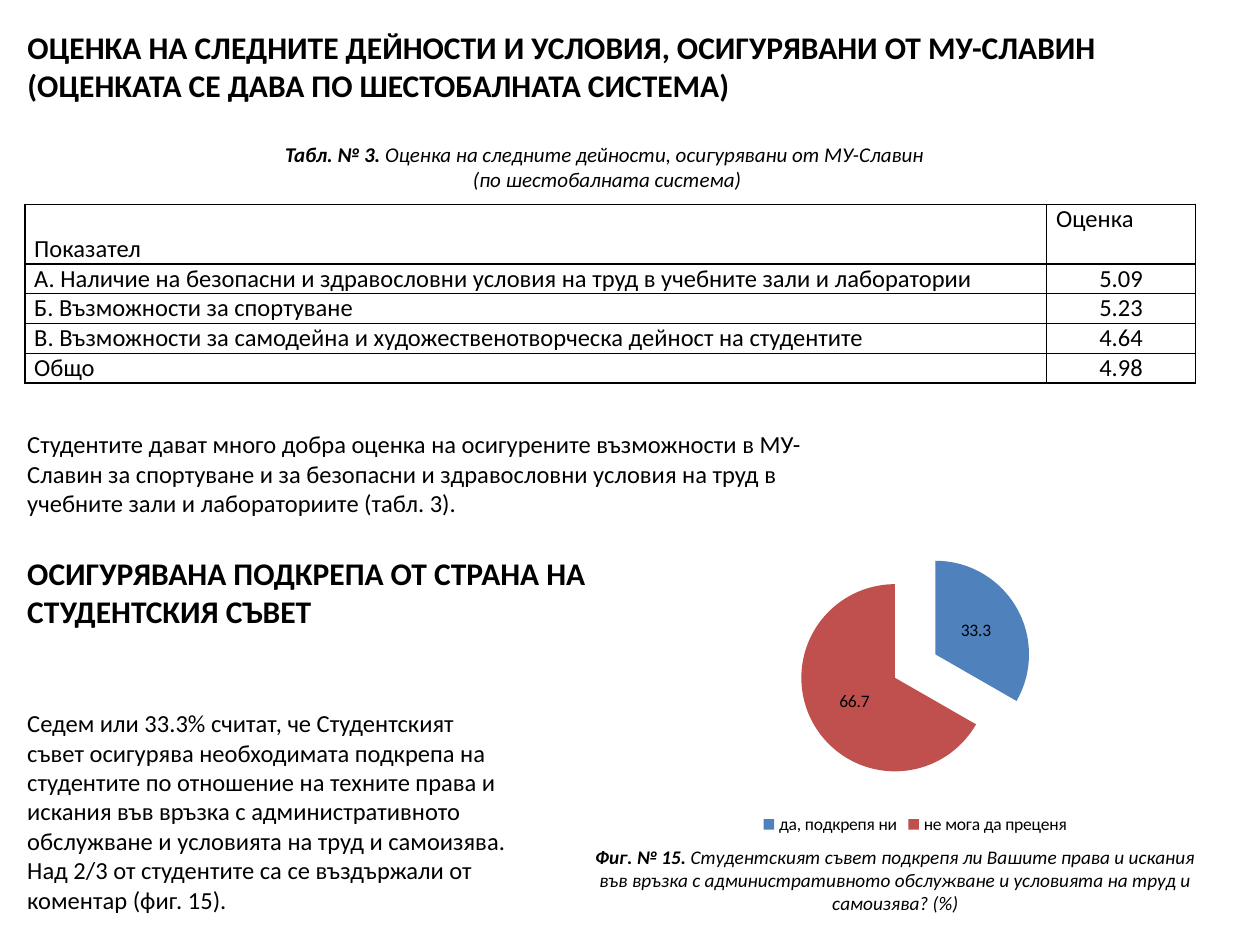
from lxml import etree
from pptx import Presentation
from pptx.chart.data import CategoryChartData
from pptx.dml.color import RGBColor
from pptx.enum.chart import XL_CHART_TYPE, XL_LABEL_POSITION, XL_LEGEND_POSITION
from pptx.enum.text import MSO_ANCHOR, MSO_AUTO_SIZE, PP_ALIGN
from pptx.oxml.ns import qn
from pptx.util import Cm, Pt

PIE = XL_CHART_TYPE.PIE_EXPLODED
LABEL_CENTER = XL_LABEL_POSITION.CENTER
LEGEND_BOTTOM = XL_LEGEND_POSITION.BOTTOM
TOP, MIDDLE, BOTTOM = MSO_ANCHOR.TOP, MSO_ANCHOR.MIDDLE, MSO_ANCHOR.BOTTOM
LEFT, CENTER, JUSTIFY = PP_ALIGN.LEFT, PP_ALIGN.CENTER, PP_ALIGN.JUSTIFY

FONT = "Calibri"
COLORS = {"text": "000000", "border": "000000", "yes": "4F81BD", "unsure": "C0504D"}

TITLE = ("ОЦЕНКА НА СЛЕДНИТЕ ДЕЙНОСТИ И УСЛОВИЯ, ОСИГУРЯВАНИ ОТ МУ-СЛАВИН "
         "(ОЦЕНКАТА СЕ ДАВА ПО ШЕСТОБАЛНАТА СИСТЕМА)")
TABLE_CAPTION = [
    [("Табл. № 3.", True),
     (" Оценка на следните дейности, осигурявани от МУ-Славин ", False)],
    [("(по шестобалната система)", False)],
]
RATINGS = [
    ("Показател", "Оценка"),
    ("А. Наличие на безопасни и здравословни условия на труд в учебните зали и лаборатории", "5.09"),
    ("Б. Възможности за спортуване", "5.23"),
    ("В. Възможности за самодейна и художественотворческа дейност на студентите", "4.64"),
    ("Общо", "4.98"),
]
RATINGS_COMMENT = (
    "Студентите дават много добра оценка на осигурените възможности в МУ-Славин "
    "за спортуване и за безопасни и здравословни условия на труд в учебните зали "
    "и лабораториите (табл. 3).")
SUPPORT_HEADING = "ОСИГУРЯВАНА ПОДКРЕПА ОТ СТРАНА НА СТУДЕНТСКИЯ СЪВЕТ"
SUPPORT_COMMENT = (
    "Седем или 33.3% считат, че Студентският съвет осигурява необходимата подкрепа "
    "на студентите по отношение на техните права и искания във връзка с "
    "административното обслужване и условията на труд и самоизява. Над 2/3 от "
    "студентите са се въздържали от коментар (фиг. 15).")
SUPPORT_ANSWERS = [("да, подкрепя ни", 33.3, "yes"), ("не мога да преценя", 66.7, "unsure")]
CHART_CAPTION = [[
    ("Фиг. № 15. ", True),
    ("Студентският съвет подкрепя ли Вашите права и искания във връзка с "
     "административното обслужване и условията на труд и самоизява? (%)", False),
]]


def color(name):
    """Return the palette colour with the given name."""
    return RGBColor.from_string(COLORS[name])


def style_font(font, size, bold=False, italic=False):
    """Give a font the slide's typeface and colour."""
    font.name, font.size = FONT, Pt(size)
    font.bold, font.italic = bold, italic
    font.color.rgb = color("text")


def write_text(frame, content, size=14, bold=False, italic=False, align=LEFT, spacing=None):
    """Fill a text frame with a string or with paragraphs of (text, bold) runs."""
    paragraphs = [[(content, bold)]] if isinstance(content, str) else content
    for index, runs in enumerate(paragraphs):
        paragraph = frame.add_paragraph() if index else frame.paragraphs[0]
        paragraph.alignment = align
        paragraph.line_spacing = spacing
        for text, run_bold in runs:
            run = paragraph.add_run()
            run.text = text
            style_font(run.font, size, run_bold, italic)


def add_title(slide, box):
    """Place and format the title placeholder."""
    title = slide.shapes.title
    title.left, title.top, title.width, title.height = map(Cm, box)
    frame = title.text_frame
    frame.auto_size = MSO_AUTO_SIZE.NONE
    frame.word_wrap, frame.vertical_anchor = True, MIDDLE
    write_text(frame, TITLE, size=18, bold=True)


def add_text(slide, box, content, anchor=TOP, **text_format):
    """Add a wrapped text box."""
    frame = slide.shapes.add_textbox(*map(Cm, box)).text_frame
    frame.word_wrap, frame.vertical_anchor = True, anchor
    write_text(frame, content, **text_format)


def add_borders(cell):
    """Draw a thin line on all four sides of a cell."""
    properties = cell._tc.get_or_add_tcPr()
    for side in ("a:lnL", "a:lnR", "a:lnT", "a:lnB"):
        line = etree.SubElement(properties, qn(side), w=str(Pt(1)))
        fill = etree.SubElement(line, qn("a:solidFill"))
        etree.SubElement(fill, qn("a:srgbClr"), val=COLORS["border"])


def add_ratings_table(slide, box):
    """Add the ratings table with a double-height header row."""
    score_width = 3
    table = slide.shapes.add_table(len(RATINGS), 2, *map(Cm, box)).table
    table.first_row = table.horz_banding = False
    table.columns[0].width = Cm(box[2] - score_width)
    table.columns[1].width = Cm(score_width)
    unit = box[3] / (len(RATINGS) + 1)
    for row, texts in enumerate(RATINGS):
        header = row == 0
        table.rows[row].height = Cm(unit * (2 if header else 1))
        for column, text in enumerate(texts):
            cell = table.cell(row, column)
            cell.margin_left = cell.margin_right = Cm(0.19)
            cell.margin_top = cell.margin_bottom = 0
            cell.vertical_anchor = BOTTOM if header and column == 0 else TOP
            align = JUSTIFY if header else (LEFT, CENTER)[column]
            write_text(cell.text_frame, text, align=align, spacing=Pt(17))
            add_borders(cell)
            cell.fill.background()


def add_support_chart(slide, box):
    """Add the exploded pie of answers about the student council."""
    data = CategoryChartData()
    data.categories = [answer for answer, _, _ in SUPPORT_ANSWERS]
    data.add_series("Series 1", [share for _, share, _ in SUPPORT_ANSWERS])
    chart = slide.shapes.add_chart(PIE, *map(Cm, box), data).chart
    style_font(chart.font, 10)
    chart.has_title = False
    chart.has_legend = True
    chart.legend.position = LEGEND_BOTTOM
    chart.legend.include_in_layout = False
    plot = chart.plots[0]
    plot.vary_by_categories = True
    series = plot.series[0]
    for index, (_, _, fill_name) in enumerate(SUPPORT_ANSWERS):
        fill = series.points[index].format.fill
        fill.solid()
        fill.fore_color.rgb = color(fill_name)
    for explosion in series._element.findall(qn("c:explosion")):
        explosion.set("val", "25")
    labels = series.data_labels
    labels.show_value = True
    labels.position = LABEL_CENTER
    style_font(labels.font, 10)


def main():
    """Build the slide and save it."""
    presentation = Presentation()
    presentation.slide_width, presentation.slide_height = Cm(25.4), Cm(19.05)
    slide = presentation.slides.add_slide(presentation.slide_layouts[5])
    margin = 0.3
    add_title(slide, (margin, 0.33, 24.4, 2))
    add_text(slide, (0.34, 2.72, 23.8, 1.28), TABLE_CAPTION, size=12, italic=True, align=CENTER)
    add_ratings_table(slide, (0.5, 4.12, 23.6, 3.6))
    add_text(slide, (margin, 8.53, 17.6, 2.06), RATINGS_COMMENT)
    add_text(slide, (margin, 11.13, 13, 1.6), SUPPORT_HEADING, anchor=MIDDLE, size=18, bold=True)
    add_text(slide, (margin, 14.15, 10.24, 4.45), SUPPORT_COMMENT)
    add_support_chart(slide, (12.5, 10.72, 11.9, 6.2))
    add_text(slide, (11.7, 16.92, 12.7, 1.68), CHART_CAPTION, size=11, italic=True, align=CENTER)
    presentation.save("out.pptx")


if __name__ == "__main__":
    main()
